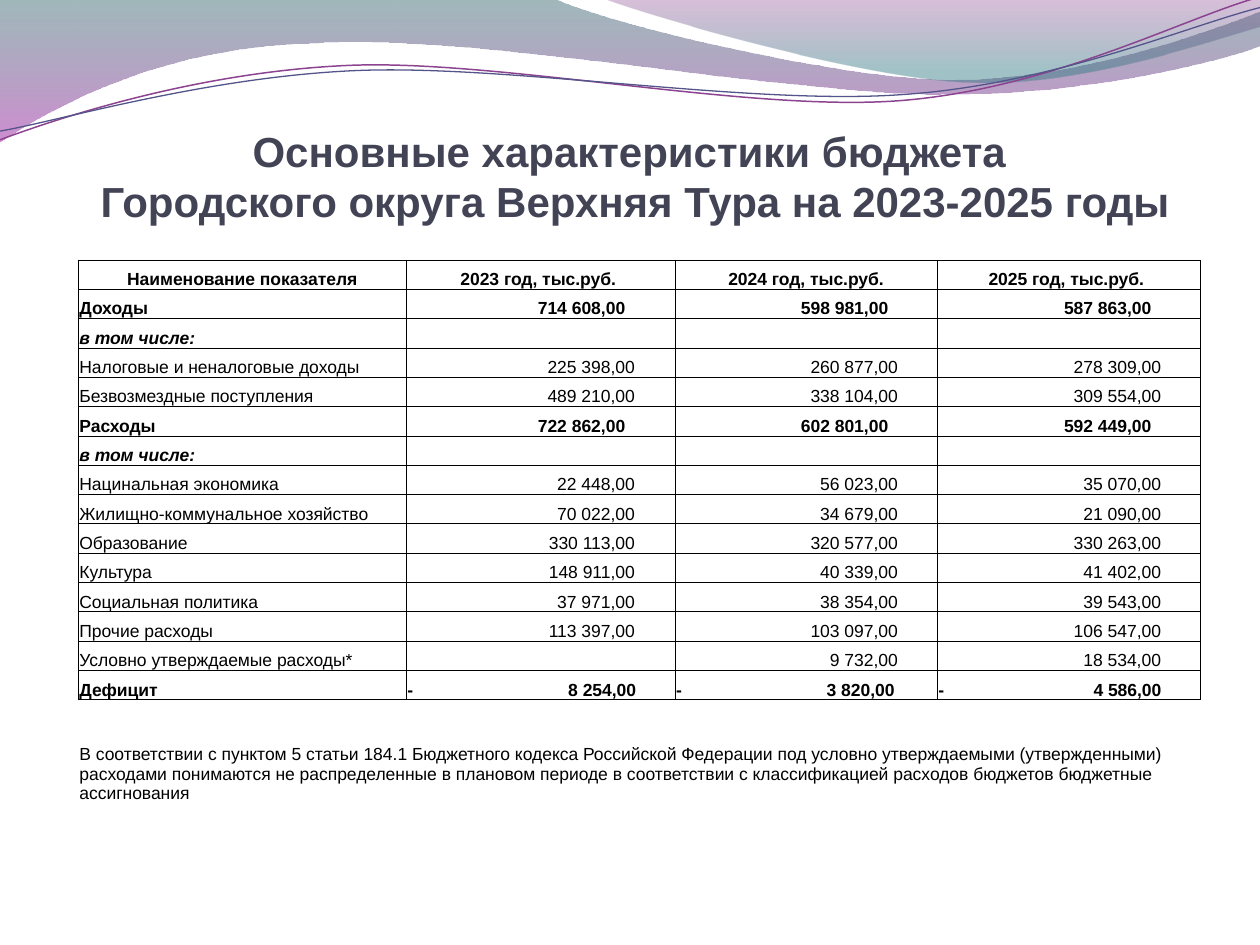
from lxml import etree
from pptx import Presentation
from pptx.dml.color import RGBColor
from pptx.enum.text import MSO_ANCHOR, MSO_AUTO_SIZE, PP_ALIGN
from pptx.oxml.ns import qn
from pptx.util import Pt

LEFT, CENTER, RIGHT = PP_ALIGN.LEFT, PP_ALIGN.CENTER, PP_ALIGN.RIGHT
BOTTOM, MIDDLE = MSO_ANCHOR.BOTTOM, MSO_ANCHOR.MIDDLE
NO_FIT = MSO_AUTO_SIZE.NONE
NO_STYLE = "{2D5ABB26-0587-4C30-8999-92F81FD0307C}"


def rgb(color):
    return RGBColor.from_string(color)


def add_wave(shapes, start, segments, close):
    points = [(Pt(x), Pt(y)) for seg in segments for x, y in zip(seg[::2], seg[1::2])]
    builder = shapes.build_freeform(Pt(start[0]), Pt(start[1]))
    builder.add_line_segments(points, close=close)
    shape = builder.convert_to_shape()
    shape.shadow.inherit = False
    steps = iter(list(shape._element.iter(qn("a:lnTo"))))
    for seg in segments:
        step = next(steps)
        if len(seg) == 6:
            step.addprevious(etree.Element(qn("a:cubicBezTo")))
            curve = step.getprevious()
            for old in (step, next(steps), next(steps)):
                curve.append(old[0])
                old.getparent().remove(old)
    return shape


prs = Presentation()
prs.slide_width, prs.slide_height = Pt(720), Pt(540)
s = prs.slides.add_slide(prs.slide_layouts[5])

bands = [
    ((0, 0),
     [(316.8, -0.7), (342.7, 12.2, 478.1, 45.4, 545.8, 45.4),
      (614.2, 45.4, 689.8, 18.7, 720, 6.5), (720.7, 25.9),
      (707.8, 31.7, 626.4, 54.7, 537.1, 54), (447.8, 54, 275, 20.2, 185, 24.5),
      (92.9, 25.9, 33.1, 59.8, -0.7, 81.4)],
     [("2D6368", 0, 45), ("A530A9", 1, 55)]),
    ((344.9, -0.7),
     [(366.5, 7.9, 491, 44.6, 553.7, 46.8), (616.3, 49.7, 691.9, 23, 720, 15.1), (720, 0)],
     [("7F2F82", 0, 30), ("2F7B82", 0.8, 45)]),
]
for start, segments, stops in bands:
    sp = add_wave(s.shapes, start, segments, True)
    sp.line.fill.background()
    sp.fill.gradient()
    sp.fill.gradient_angle = 270
    for stop, (color, position, opacity) in zip(sp.fill.gradient_stops, stops):
        stop.color.rgb = rgb(color)
        stop.position = position
    for clr, (color, position, opacity) in zip(sp._element.spPr.iter(qn("a:srgbClr")), stops):
        etree.SubElement(clr, qn("a:alpha"), val=str(opacity * 1000))

lines = [
    ((0, 79.9),
     [(34.6, 67, 113.8, 41, 199.4, 37.4), (284.4, 33.8, 427, 64.1, 513.4, 57.6),
      (599.8, 51.1, 675.4, 10.8, 718.6, -1.4)], "8D4490", 0.85),
    ((0, 74.9),
     [(33.8, 69.1, 118.1, 43.9, 203.8, 40.3), (290.2, 36.7, 429.8, 60.5, 516.2, 54),
      (601.9, 48.2, 677.5, 15.1, 720, 4.3)], "53548A", 0.75),
]
for start, segments, color, width in lines:
    sp = add_wave(s.shapes, start, segments, False)
    sp.fill.background()
    sp.line.color.rgb = rgb(color)
    sp.line.width = Pt(width)

title = s.shapes.title
title.left, title.top, title.width, title.height = Pt(36), Pt(61.5), Pt(653.8), Pt(67.7)
tf = title.text_frame
tf.text = "Основные характеристики бюджета \vГородского округа Верхняя Тура на 2023-2025 годы"
tf.auto_size = NO_FIT
tf.vertical_anchor = BOTTOM
tf.margin_left = tf.margin_right = tf.margin_bottom = 0
p = tf.paragraphs[0]
p.alignment = CENTER
for r in p.runs:
    r.font.name, r.font.size, r.font.bold = "Arial", Pt(24), True
    r.font.color.rgb = rgb("424456")

rows = [
    ("Наименование показателя", "2023 год, тыс.руб. ", "2024 год, тыс.руб.", "2025 год, тыс.руб. "),
    ("Доходы", "714 608,00", "598 981,00", "587 863,00"),
    ("в том числе:", "", "", ""),
    ("Налоговые и неналоговые доходы", "225 398,00", "260 877,00", "278 309,00"),
    ("Безвозмездные поступления", "489 210,00", "338 104,00", "309 554,00"),
    ("Расходы", "722 862,00", "602 801,00", "592 449,00"),
    ("в том числе:", "", "", ""),
    ("Нацинальная экономика", "22 448,00", "56 023,00", "35 070,00"),
    ("Жилищно-коммунальное хозяйство", "70 022,00", "34 679,00", "21 090,00"),
    ("Образование", "330 113,00", "320 577,00", "330 263,00"),
    ("Культура", "148 911,00", "40 339,00", "41 402,00"),
    ("Социальная политика", "37 971,00", "38 354,00", "39 543,00"),
    ("Прочие расходы", "113 397,00", "103 097,00", "106 547,00"),
    ("Условно утверждаемые расходы*", "", "9 732,00", "18 534,00"),
    ("Дефицит", "-\t8 254,00", "-\t3 820,00", "-\t4 586,00"),
    ("", "", "", ""),
    ("В соответствии с пунктом 5 статьи 184.1 Бюджетного кодекса Российской Федерации "
     "под условно утверждаемыми (утвержденными) расходами понимаются не распределенные "
     "в плановом периоде в соответствии с классификацией расходов бюджетов бюджетные "
     "ассигнования", "", "", ""),
]
bold_rows = (0, 1, 2, 5, 6, 14)
italic_rows = (2, 6)
gridded = len(rows) - 2
col_widths = (187.4, 153.6, 149.8, 150.4)
tab_stops = (0, 130.7, 124.8, 127.5)
row_height, note_height = 16.77, 62

frame = s.shapes.add_table(len(rows), 4, Pt(44.7), Pt(148.6), Pt(sum(col_widths)),
                           Pt(row_height * (len(rows) - 1) + note_height))
table = frame.table
table.first_row = table.horz_banding = False
table._tbl.tblPr.find(qn("a:tableStyleId")).text = NO_STYLE
for column, width in zip(table.columns, col_widths):
    column.width = Pt(width)
for row in table.rows:
    row.height = Pt(row_height)
table.rows[len(rows) - 1].height = Pt(note_height)

for i, values in enumerate(rows):
    bold = i in bold_rows
    for j, value in enumerate(values):
        cell = table.cell(i, j)
        cell.text_frame.text = value
        cell.vertical_anchor = BOTTOM
        cell.margin_left = cell.margin_right = cell.margin_top = Pt(0.7)
        cell.margin_bottom = 0
        p = cell.text_frame.paragraphs[0]
        p.alignment = CENTER if i == 0 else LEFT
        if "\t" in value:
            tabs = etree.SubElement(p._p.get_or_add_pPr(), qn("a:tabLst"))
            etree.SubElement(tabs, qn("a:tab"), pos=str(Pt(tab_stops[j])), algn="r")
        elif i and j:
            p.alignment = RIGHT
            cell.margin_right = Pt((28 if bold else 22.5) + (0.5 if j == 1 else 0))
        for r in p.runs:
            r.font.name, r.font.size = "Arial", Pt(10)
            r.font.bold, r.font.italic = bold, i in italic_rows
            r.font.color.rgb = rgb("000000")
        if not value:
            etree.SubElement(p._p, qn("a:endParaRPr"), sz="1000")
        if i < gridded:
            for side in ("a:lnL", "a:lnR", "a:lnT", "a:lnB"):
                ln = etree.SubElement(cell._tc.get_or_add_tcPr(), qn(side), w=str(Pt(0.5)))
                fill = etree.SubElement(ln, qn("a:solidFill"))
                etree.SubElement(fill, qn("a:srgbClr"), val="000000")
            cell.fill.solid()
            cell.fill.fore_color.rgb = rgb("FFFFFF")
        else:
            cell.fill.background()

note = table.cell(len(rows) - 1, 0)
note.merge(table.cell(len(rows) - 1, 3))
note.vertical_anchor = MIDDLE
note.margin_bottom = Pt(11)

prs.save("out.pptx")
